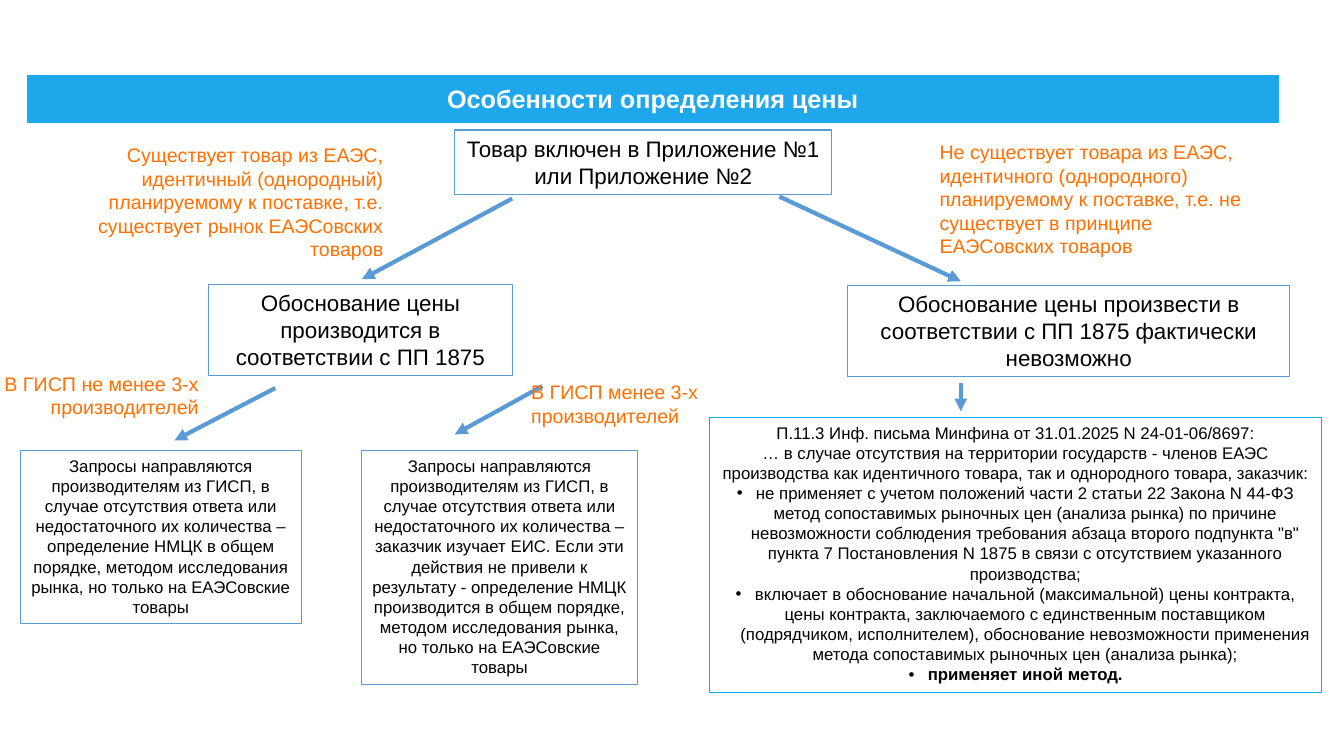
from dataclasses import dataclass

from lxml import etree
from pptx import Presentation
from pptx.dml.color import RGBColor
from pptx.enum.shapes import MSO_CONNECTOR, MSO_SHAPE
from pptx.enum.text import MSO_ANCHOR, MSO_AUTO_SIZE, PP_ALIGN
from pptx.oxml.ns import qn
from pptx.text.text import TextFrame
from pptx.util import Inches, Pt

RECTANGLE = MSO_SHAPE.RECTANGLE
STRAIGHT = MSO_CONNECTOR.STRAIGHT
TOP, MIDDLE = MSO_ANCHOR.TOP, MSO_ANCHOR.MIDDLE
FIT_SHAPE = MSO_AUTO_SIZE.SHAPE_TO_FIT_TEXT
LEFT, CENTER, RIGHT = PP_ALIGN.LEFT, PP_ALIGN.CENTER, PP_ALIGN.RIGHT

FONT = "Arial"
BLACK = RGBColor(0x00, 0x00, 0x00)
WHITE = RGBColor(0xFF, 0xFF, 0xFF)
BANNER_BLUE = RGBColor(0x1E, 0xA7, 0xEA)
STEEL_BLUE = RGBColor(0x5B, 0x9B, 0xD5)
SKY_BLUE = RGBColor(0x00, 0xB0, 0xF0)
ORANGE = RGBColor(0xFF, 0x70, 0x00)
BULLET_INDENT = Inches(0.19)


@dataclass(frozen=True)
class Step:
    left: float
    top: float
    width: float
    height: float
    text: str
    size: int
    outline: RGBColor = STEEL_BLUE


@dataclass(frozen=True)
class Condition:
    left: float
    top: float
    width: float
    height: float
    text: str
    align: PP_ALIGN


@dataclass(frozen=True)
class Arrow:
    x1: float
    y1: float
    x2: float
    y2: float


BANNER = Step(0.27, 0.75, 12.41, 0.46, "Особенности определения цены", 18, BANNER_BLUE)
PRODUCT = Step(4.51, 1.29, 3.74, 0.64, "Товар включен в Приложение №1 или Приложение №2", 16)
REQUESTS = (
    "Запросы направляются производителям из ГИСП, в случае отсутствия ответа "
    "или недостаточного их количества – "
)
MARKET_METHOD = "в общем порядке, методом исследования рынка, но только на ЕАЭСовские товары"
STEPS = [
    Step(2.07, 2.82, 3.01, 0.91, "Обоснование цены производится в соответствии с ПП 1875", 16),
    Step(8.41, 2.83, 4.38, 0.91,
         "Обоснование цены произвести в соответствии с ПП 1875 фактически невозможно", 16),
    Step(0.2, 4.47, 2.79, 1.72, f"{REQUESTS}определение НМЦК {MARKET_METHOD}", 12),
    Step(3.59, 4.47, 2.73, 2.32,
         f"{REQUESTS}заказчик изучает ЕИС. Если эти действия не привели к результату - "
         f"определение НМЦК производится {MARKET_METHOD}", 12),
]
LETTER = Step(
    7.04, 4.14, 6.07, 2.73,
    "П.11.3 Инф. письма Минфина от 31.01.2025 N 24-01-06/8697:\n"
    "… в случае отсутствия на территории государств - членов ЕАЭС производства "
    "как идентичного товара, так и однородного товара, заказчик:\n"
    "не применяет с учетом положений части 2 статьи 22 Закона N 44-ФЗ метод "
    "сопоставимых рыночных цен (анализа рынка) по причине невозможности соблюдения "
    'требования абзаца второго подпункта "в" пункта 7 Постановления N 1875 '
    "в связи с отсутствием указанного производства;\n"
    "включает в обоснование начальной (максимальной) цены контракта, цены контракта, "
    "заключаемого с единственным поставщиком (подрядчиком, исполнителем), обоснование "
    "невозможности применения метода сопоставимых рыночных цен (анализа рынка);\n"
    "применяет иной метод.",
    12, SKY_BLUE,
)
CONDITIONS = [
    Condition(0.44, 1.37, 3.46, 1.28,
              "Существует товар из ЕАЭС, идентичный (однородный) планируемому к поставке, "
              "т.е. существует рынок ЕАЭСовских товаров", RIGHT),
    Condition(9.22, 1.34, 3.46, 1.28,
              "Не существует товара из ЕАЭС, идентичного (однородного) планируемому "
              "к поставке, т.е. не существует в принципе ЕАЭСовских товаров", LEFT),
    Condition(-0.11, 3.64, 2.18, 0.57, "В ГИСП не менее 3-х\nпроизводителей", RIGHT),
    Condition(5.17, 3.72, 1.87, 0.57, "В ГИСП менее 3-х\nпроизводителей", LEFT),
]
ARROWS = [
    Arrow(5.08, 1.97, 3.59, 2.77),
    Arrow(7.73, 1.95, 9.53, 2.79),
    Arrow(9.53, 3.8, 9.53, 4.08),
    Arrow(2.73, 3.85, 1.73, 4.37),
    Arrow(5.38, 3.83, 4.51, 4.31),
]


def write_text(frame: TextFrame, text: str, size: int, color: RGBColor, align: PP_ALIGN) -> None:
    frame.word_wrap = True
    frame.vertical_anchor = TOP
    frame.auto_size = FIT_SHAPE
    frame.text = text
    for paragraph in frame.paragraphs:
        paragraph.alignment = align
        for run in paragraph.runs:
            run.font.name = FONT
            run.font.size = Pt(size)
            run.font.color.rgb = color


def draw_step(shapes, step: Step) -> TextFrame:
    box = shapes.add_shape(RECTANGLE, Inches(step.left), Inches(step.top),
                           Inches(step.width), Inches(step.height))
    box.shadow.inherit = False
    box.fill.background()
    box.line.color.rgb = step.outline
    box.line.width = Pt(0.75)
    write_text(box.text_frame, step.text, step.size, BLACK, CENTER)
    return box.text_frame


def draw_banner(shapes, banner: Step) -> None:
    bar = shapes.add_shape(RECTANGLE, Inches(banner.left), Inches(banner.top),
                           Inches(banner.width), Inches(banner.height))
    bar.shadow.inherit = False
    bar.fill.solid()
    bar.fill.fore_color.rgb = banner.outline
    bar.line.color.rgb = banner.outline
    bar.line.width = Pt(1)
    write_text(bar.text_frame, banner.text, banner.size, WHITE, CENTER)
    bar.text_frame.auto_size = MSO_AUTO_SIZE.NONE
    bar.text_frame.vertical_anchor = MIDDLE
    bar.text_frame.paragraphs[0].runs[0].font.bold = True


def draw_condition(shapes, condition: Condition) -> None:
    label = shapes.add_textbox(Inches(condition.left), Inches(condition.top),
                               Inches(condition.width), Inches(condition.height))
    write_text(label.text_frame, condition.text, 14, ORANGE, condition.align)


def draw_arrow(shapes, arrow: Arrow) -> None:
    connector = shapes.add_connector(STRAIGHT, Inches(arrow.x1), Inches(arrow.y1),
                                     Inches(arrow.x2), Inches(arrow.y2))
    connector.line.color.rgb = STEEL_BLUE
    connector.line.width = Pt(3)
    etree.SubElement(connector.line._get_or_add_ln(), qn("a:tailEnd"), type="triangle")
    etree.SubElement(connector._element.spPr, qn("a:effectLst"))


def add_bullet(paragraph) -> None:
    properties = paragraph._p.get_or_add_pPr()
    properties.set("marL", str(BULLET_INDENT))
    properties.set("indent", str(-BULLET_INDENT))
    etree.SubElement(properties, qn("a:buFont"), typeface=FONT)
    etree.SubElement(properties, qn("a:buChar"), char="•")


def main() -> None:
    presentation = Presentation()
    presentation.slide_width = Inches(13.33)
    presentation.slide_height = Inches(7.5)
    shapes = presentation.slides.add_slide(presentation.slide_layouts[6]).shapes

    draw_banner(shapes, BANNER)
    product = draw_step(shapes, PRODUCT).paragraphs[0]
    product.space_before = product.space_after = Pt(6)
    for arrow in ARROWS:
        draw_arrow(shapes, arrow)
    for step in STEPS:
        draw_step(shapes, step)
    letter = draw_step(shapes, LETTER)
    for paragraph in letter.paragraphs[2:]:
        add_bullet(paragraph)
    letter.paragraphs[-1].runs[0].font.bold = True
    for condition in CONDITIONS:
        draw_condition(shapes, condition)

    presentation.save("out.pptx")


if __name__ == "__main__":
    main()
